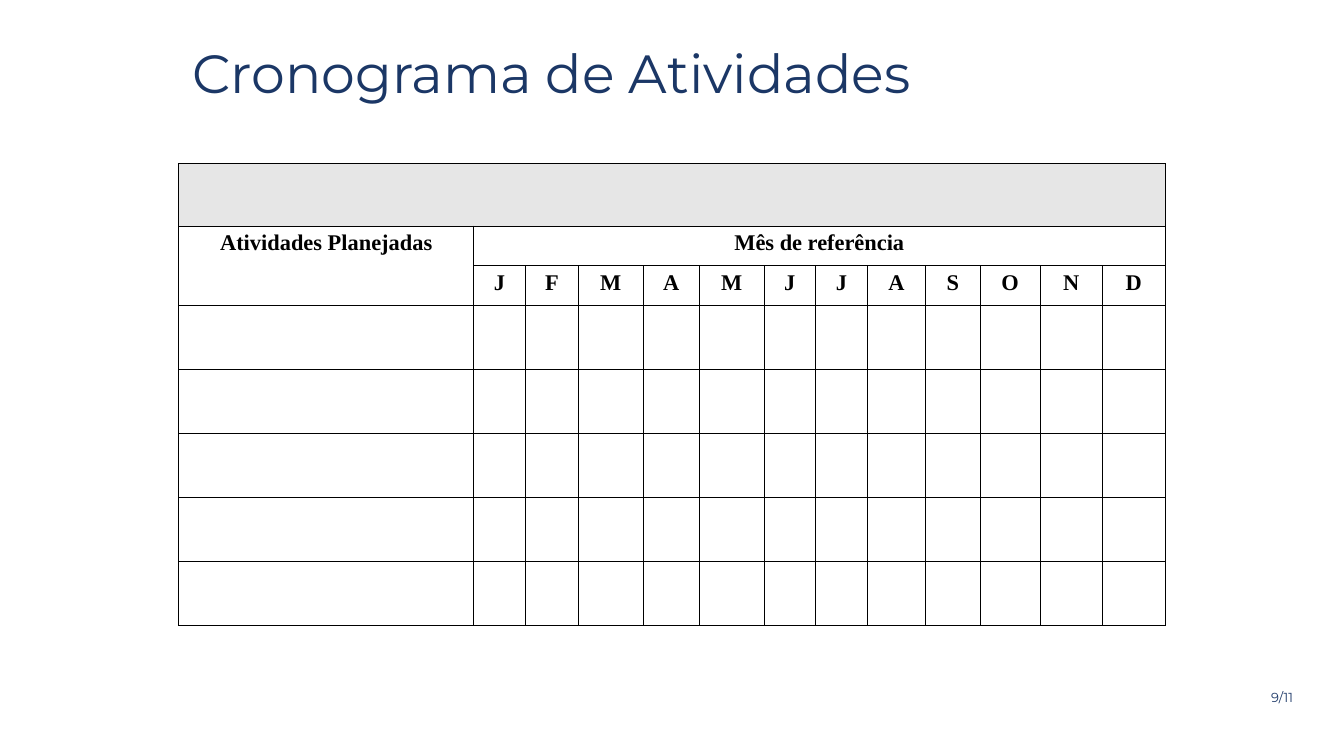
import pptx
import pptx.util
import pptx.dml.color
import pptx.enum.text
import lxml.etree
from pptx.oxml.ns import qn

Pt = pptx.util.Pt
RGB = pptx.dml.color.RGBColor.from_string
Align = pptx.enum.text.PP_ALIGN
Anchor = pptx.enum.text.MSO_ANCHOR
Fit = pptx.enum.text.MSO_AUTO_SIZE

THEME = {
    "navy": "1B3766", "black": "000000", "band": "E6E6E6",
    "sans": "Montserrat", "serif": "Times New Roman",
    "title": 57.6, "page": 14, "head": 24, "rule": 0.75,
}


def write(frame, text, font, size, color, align, bold=False):
    para = frame.paragraphs[0]
    para.alignment = align
    run = para.add_run()
    run.text = text
    look = {"name": font, "size": Pt(size), "bold": bold}
    for key, value in look.items():
        setattr(run.font, key, value)
    run.font.color.rgb = RGB(color)
    return para


def border(cell):
    """Draw a thin line on all four sides of a cell."""
    props = cell._tc.get_or_add_tcPr()
    for side in ("lnL", "lnR", "lnT", "lnB"):
        line = lxml.etree.SubElement(props, qn("a:" + side), w=str(Pt(THEME["rule"])))
        fill = lxml.etree.SubElement(line, qn("a:solidFill"))
        lxml.etree.SubElement(fill, qn("a:srgbClr"), val=THEME["black"])


deck = pptx.Presentation()
deck.slide_width, deck.slide_height = Pt(1440), Pt(810)
slide = deck.slides.add_slide(deck.slide_layouts[5])

# Title and page number
title = slide.shapes.title
place = {"left": 191.5, "top": 41.8, "width": 1265, "height": 82}
for key, value in place.items():
    setattr(title, key, Pt(value))
page = slide.shapes.add_textbox(Pt(1330.6), Pt(715.7), Pt(86.4), Pt(61.9))

pad = Pt(14.4)
for box, anchor in ((title, Anchor.TOP), (page, Anchor.MIDDLE)):
    look = {
        "margin_left": pad, "margin_right": pad, "margin_top": pad, "margin_bottom": pad,
        "word_wrap": True, "auto_size": Fit.NONE, "vertical_anchor": anchor,
    }
    for key, value in look.items():
        setattr(box.text_frame, key, value)

para = write(title.text_frame, "Cronograma de Atividades",
             THEME["sans"], THEME["title"], THEME["navy"], Align.LEFT)
para.line_spacing = 0.8
write(page.text_frame, "9/11", THEME["sans"], THEME["page"], THEME["navy"], Align.CENTER)

# Schedule: a band, two heading rows and five empty rows
months = "JFMAMJJASOND"
wide = [316, 55.5, 57, 69, 60.5, 69, 55.5, 55.5, 62, 59, 64, 67, 67]
high = [67, 42.7, 42.7] + [68.6] * 5
table = slide.shapes.add_table(len(high), len(wide), Pt(191.5), Pt(175),
                               Pt(sum(wide)), Pt(sum(high))).table
table.first_row = table.horz_banding = False
for col, width in zip(table.columns, wide):
    col.width = Pt(width)
for row, height in zip(table.rows, high):
    row.height = Pt(height)

for cell in table.iter_cells():
    for side in ("left", "right", "top", "bottom"):
        setattr(cell, "margin_" + side, Pt(5))
    border(cell)
    cell.fill.background()

last = len(months)
for start, end in (((0, 0), (0, last)), ((1, 0), (2, 0)), ((1, 1), (1, last))):
    table.cell(*start).merge(table.cell(*end))

band = table.cell(0, 0).fill
band.solid()
band.fore_color.rgb = RGB(THEME["band"])

heads = [(1, 0, "Atividades Planejadas"), (1, 1, "Mês de referência")]
heads += [(2, col, month) for col, month in enumerate(months, 1)]
for row, col, text in heads:
    write(table.cell(row, col).text_frame, text,
          THEME["serif"], THEME["head"], THEME["black"], Align.CENTER, True)

deck.save("out.pptx")
